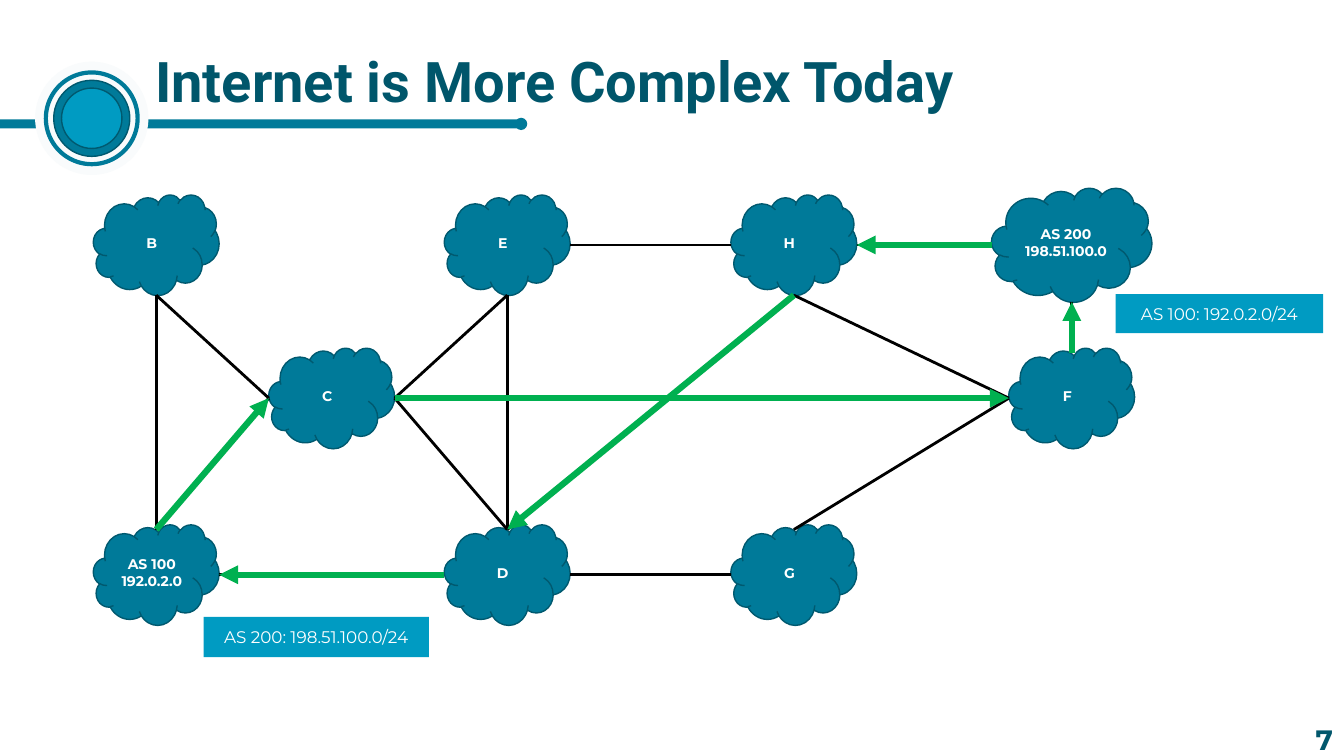
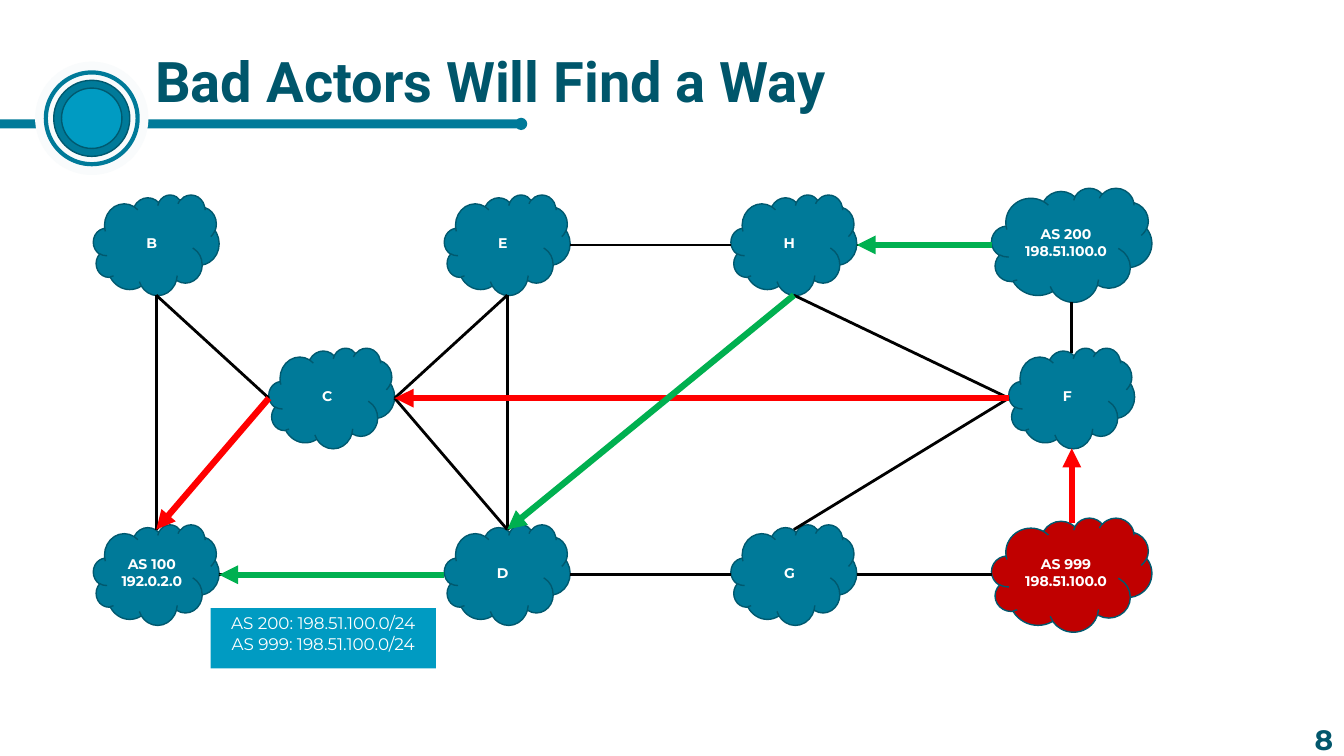
from lxml.etree import SubElement
from pptx import Presentation
from pptx.dml.color import RGBColor
from pptx.enum.shapes import MSO_CONNECTOR as Line, MSO_SHAPE as Shape
from pptx.enum.text import MSO_ANCHOR as Anchor, MSO_AUTO_SIZE as Fit, PP_ALIGN as Align
from pptx.oxml.ns import qn
from pptx.util import Inches, Pt

WIDE, HIGH = 13.33, 7.5
HUES = {
    "teal": "007A99", "edge": "00596F", "sky": "009BC2", "pale": "F9FBFC",
    "title": "00566B", "page": "02576C", "white": "FFFFFF", "black": "000000",
    "green": "00B050", "red": "FF0000", "bad": "C00000",
}
HEAD = (0, 0.63, 5.23, 1.11)
TITLE = (1.44, 0.4, 10.9, 0.79)
PAGE = (10.32, 7.15, 3, 0.36)
NET = (1.55, 2.43, 9.08, 3.27)

COLS = (0, 3, 6, 10.9, 15.65)
ROWS = (0, 2.62, 5.64)
SMALL, LARGE = (2.15, 1.72), (2.74, 1.95)
NODES = {
    "AS 200\n198.51.100.0": (4, 0, LARGE, "teal"),
    "AS 100\n192.0.2.0": (0, 2, SMALL, "teal"),
    "B": (0, 0, SMALL, "teal"),
    "C": (1, 1, SMALL, "teal"),
    "E": (2, 0, SMALL, "teal"),
    "D": (2, 2, SMALL, "teal"),
    "F": (4, 1, SMALL, "teal"),
    "G": (3, 2, SMALL, "teal"),
    "H": (3, 0, SMALL, "teal"),
}
ROGUE = {"AS 999\n198.51.100.0": (4, 2, LARGE, "bad")}
PORTS = {"top": (0, -0.45), "low": (0, 0.5), "left": (-0.5, 0), "right": (0.5, 0)}
LINKS = [
    "D top H low", "B low C left", "C right E low", "100 right D left",
    "100 top C left", "C right D top", "E low D top", "C right F left",
    "E right H left", "F left G top", "F left H low", "200 low F top",
    "200 left H right", "B low 100 top", "D right G left",
]
BACK = [("200 left H right", "green"), ("H low D top", "green"),
        ("D left 100 right", "green")]

SLIDES = [
    dict(title="Internet is More Complex Today", page="7", nodes=NODES, links=LINKS,
         flows=[("100 top C left", "green"), ("C right F left", "green"),
                ("F top 200 low", "green")] + BACK,
         tags=[("AS 200: 198.51.100.0/24", (0.81, 6.36, 3.85, 0.69), Anchor.MIDDLE),
               ("AS 100: 192.0.2.0/24", (16.4, 0.84, 3.55, 0.67), Anchor.MIDDLE)]),
    dict(title="Bad Actors Will Find a Way", page="8", nodes=NODES | ROGUE,
         links=LINKS + ["G right 999 left"],
         flows=[("C left 100 top", "red"), ("F left C right", "red"),
                ("999 top F low", "red")] + BACK,
         tags=[("AS 200: 198.51.100.0/24\nAS 999: 198.51.100.0/24",
                (0.93, 6.21, 3.85, 1.03), Anchor.TOP)]),
]


def hue(name):
    return RGBColor.from_string(HUES[name])


def write(shape, text, size, color, font="Montserrat", bold=True,
          align=Align.CENTER, anchor=Anchor.MIDDLE):
    frame = shape.text_frame
    frame.text = text
    frame.word_wrap = True
    frame.auto_size = Fit.NONE
    frame.vertical_anchor = anchor
    for para in frame.paragraphs:
        para.alignment = align
        for run in para.runs:
            run.font.name, run.font.size, run.font.bold = font, Pt(size), bold
            run.font.color.rgb = hue(color)


def draw(slide, kind, box, fill, edge=None, width=1):
    shape = slide.shapes.add_shape(kind, *map(Inches, box))
    shape.shadow.inherit = False
    shape.fill.solid()
    shape.fill.fore_color.rgb = hue(fill)
    if edge:
        shape.line.color.rgb = hue(edge)
        shape.line.width = Pt(width)
    else:
        shape.line.fill.background()
    return shape


def mid(x, y, wide, high):
    return x - wide / 2, y - high / 2, wide, high


def join(slide, start, end, color, width, arrow=False):
    link = slide.shapes.add_connector(Line.STRAIGHT, *map(Inches, start + end))
    link.line.color.rgb = hue(color)
    link.line.width = Pt(width)
    if arrow:
        SubElement(link.line._get_or_add_ln(), qn("a:tailEnd"), type="triangle")
    SubElement(link._element.spPr, qn("a:effectLst"))


def head(slide, box):
    left, top, wide, high = box
    axis = top + 0.54 * high
    dot = 0.11 * high
    draw(slide, Shape.RECTANGLE,
         (left, axis - 0.04 * high, wide - dot / 2, 0.08 * high), "teal")
    draw(slide, Shape.OVAL, mid(left + wide - dot / 2, axis, dot, dot), "teal")
    rings = [(1, "pale", "pale", 1), (0.82, "pale", "teal", 3),
             (0.68, "teal", "edge", 1), (0.54, "sky", "edge", 1)]
    for share, fill, edge, width in rings:
        size = share * high
        place = mid(left + 0.82 * high, top + 0.49 * high, size, size)
        draw(slide, Shape.OVAL, place, fill, edge, width)


def name(slide, box, text):
    title = slide.shapes.title
    title.left, title.top, title.width, title.height = map(Inches, box)
    write(title, text, 40, "title", "Roboto", align=Align.LEFT, anchor=Anchor.BOTTOM)
    title.text_frame.paragraphs[0].line_spacing = 0.9


def foot(slide, box, text):
    note = slide.shapes.add_textbox(*map(Inches, box))
    write(note, text, 20, "page", align=Align.RIGHT)


def net(slide, box, nodes, links, flows, tags):
    left, top, wide, high = box
    cell = wide / COLS[-1]
    spots = {}
    for text, (col, row, size, fill) in nodes.items():
        key = text.split("\n")[0].split()[-1]
        spots[key] = (left + COLS[col] * cell, top + ROWS[row] * cell,
                      size[0] * cell, size[1] * cell)
        cloud = draw(slide, Shape.CLOUD, mid(*spots[key]), fill, "edge")
        write(cloud, text, 10, "white")

    def port(key, side):
        x, y, w, h = spots[key]
        across, down = PORTS[side]
        return x + across * w, y + down * h

    def route(path, color, width, arrow):
        a, out, b, into = path.split()
        join(slide, port(a, out), port(b, into), color, width, arrow)

    for path in links:
        route(path, "black", 2, False)
    for text, (x, y, w, h), anchor in tags:
        place = left + x * cell, top + y * cell, w * cell, h * cell
        tag = draw(slide, Shape.RECTANGLE, place, "sky")
        write(tag, text, 12, "white", bold=False, anchor=anchor)
    for path, color in flows:
        route(path, color, 4.5, True)


def main():
    deck = Presentation()
    deck.slide_width, deck.slide_height = Inches(WIDE), Inches(HIGH)
    for data in SLIDES:
        slide = deck.slides.add_slide(deck.slide_layouts[5])
        head(slide, HEAD)
        name(slide, TITLE, data["title"])
        foot(slide, PAGE, data["page"])
        net(slide, NET, data["nodes"], data["links"], data["flows"], data["tags"])
    deck.save("out.pptx")


if __name__ == "__main__":
    main()
